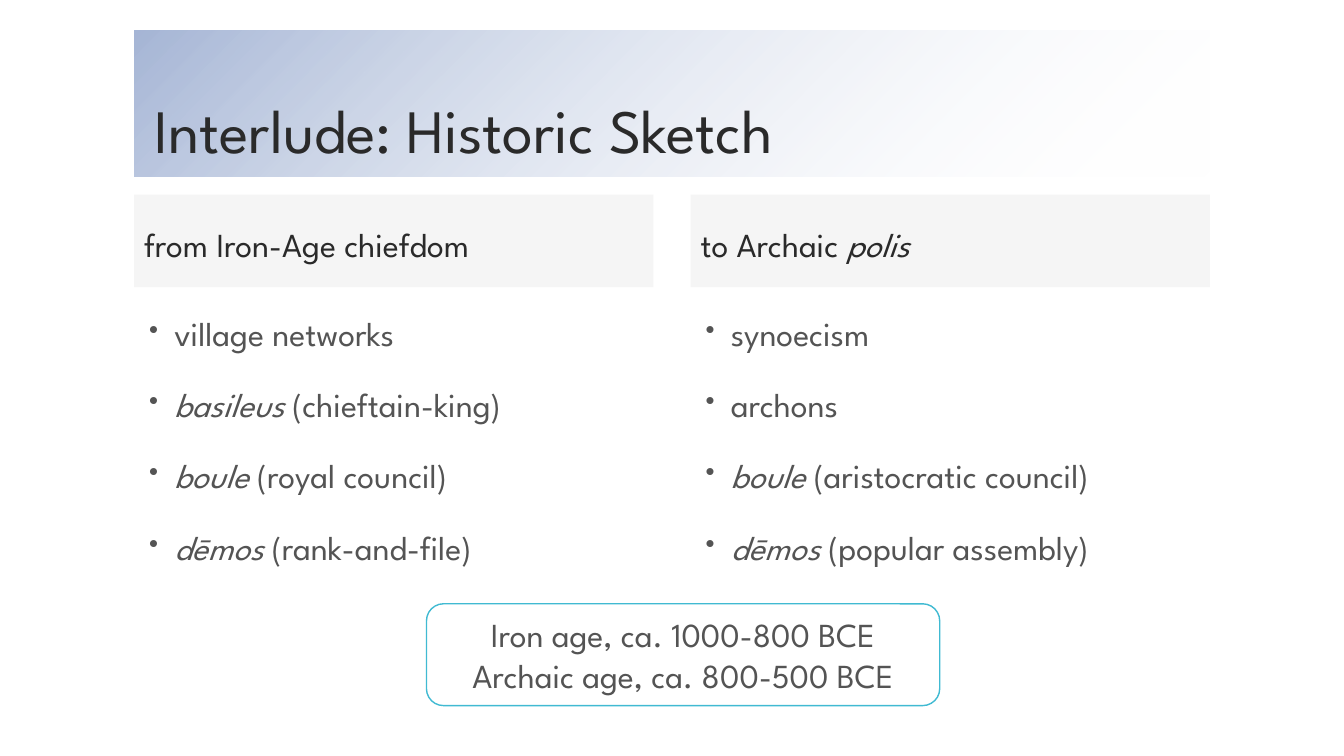
from lxml import etree
from pptx import Presentation
from pptx.dml.color import RGBColor
from pptx.enum.shapes import MSO_SHAPE
from pptx.enum.text import MSO_ANCHOR, MSO_AUTO_SIZE, PP_ALIGN
from pptx.oxml.ns import qn
from pptx.util import Inches, Pt

RECTANGLE = MSO_SHAPE.RECTANGLE
ROUNDED = MSO_SHAPE.ROUNDED_RECTANGLE
MIDDLE = MSO_ANCHOR.MIDDLE
BOTTOM = MSO_ANCHOR.BOTTOM
GROW = MSO_AUTO_SIZE.SHAPE_TO_FIT_TEXT
LEFT = PP_ALIGN.LEFT
CENTER = PP_ALIGN.CENTER

FONT = "League Spartan"
COLORS = {
    "heading": "2A2A2A",
    "body": "545454",
    "band": "A6B6D6",
    "white": "FFFFFF",
    "gray": "BFBFBF",
    "outline": "40BAD2",
}

MARGIN = 1.33
CONTENT_WIDTH = 10.67
COLUMN_WIDTH = 5.15
HEADING_HEIGHT = 0.92
LIST_OFFSET = 1.07
LIST_HEIGHT = 2.91

COLUMNS = [
    (
        [("from Iron-Age chiefdom", False)],
        [
            [("village networks", False)],
            [("basileus", True), (" (chieftain-king)", False)],
            [("boule", True), (" (royal council)", False)],
            [("dēmos", True), (" (rank-and-file)", False)],
        ],
    ),
    (
        [("to Archaic ", False), ("polis", True)],
        [
            [("synoecism", False)],
            [("archons", False)],
            [("boule", True), (" (aristocratic council)", False)],
            [("dēmos", True), (" (popular assembly)", False)],
        ],
    ),
]
DATES = ["Iron age, ca. 1000-800 BCE", "Archaic age, ca. 800-500 BCE"]


def color(name):
    return RGBColor.from_string(COLORS[name])


def set_alpha(color_element, percent):
    alpha = etree.SubElement(color_element, qn("a:alpha"))
    alpha.set("val", str(percent * 1000))


def add_box(page, kind, left, top, width, height):
    box = page.shapes.add_shape(
        kind, Inches(left), Inches(top), Inches(width), Inches(height)
    )
    box.shadow.inherit = False
    box.line.fill.background()
    return box


def write(para, spans, size, color_name, spacing=1.0, align=LEFT):
    para.font.name = FONT
    para.font.size = Pt(size)
    para.font.color.rgb = color(color_name)
    para.line_spacing = spacing
    para.alignment = align
    for text, italic in spans:
        span = para.add_run()
        span.text = text
        if italic:
            span.font.italic = True


def add_bullet(para):
    properties = para._p.get_or_add_pPr()
    properties.set("marL", str(Inches(0.3)))
    properties.set("indent", str(-Inches(0.25)))
    bullet_color = etree.SubElement(properties, qn("a:buClr"))
    etree.SubElement(bullet_color, qn("a:srgbClr")).set("val", COLORS["body"])
    etree.SubElement(properties, qn("a:buSzPct")).set("val", "80000")
    etree.SubElement(properties, qn("a:buChar")).set("char", "•")


def add_title(page, left, top, width, height):
    box = add_box(page, RECTANGLE, left, top, width, height)
    box.fill.gradient()
    box.fill.gradient_angle = 315
    for stop, name in zip(box.fill.gradient_stops, ("band", "white")):
        stop.color.rgb = color(name)
    set_alpha(box.element.spPr.findall(".//" + qn("a:srgbClr"))[-1], 0)
    frame = box.text_frame
    frame.vertical_anchor = BOTTOM
    frame.margin_left = frame.margin_right = Inches(0.2)
    frame.margin_top = frame.margin_bottom = Inches(0.1)
    write(frame.paragraphs[0], [("Interlude: Historic Sketch", False)], 44, "heading", 0.9)


def add_column(page, left, top, width, heading, items):
    box = add_box(page, RECTANGLE, left, top, width, HEADING_HEIGHT)
    box.fill.solid()
    box.fill.fore_color.rgb = color("gray")
    set_alpha(box.element.spPr.find(".//" + qn("a:srgbClr")), 15)
    box.text_frame.vertical_anchor = MIDDLE
    write(box.text_frame.paragraphs[0], heading, 24, "heading", 1.14)

    body = page.shapes.add_textbox(
        Inches(left), Inches(top + LIST_OFFSET), Inches(width), Inches(LIST_HEIGHT)
    )
    frame = body.text_frame
    frame.word_wrap = True
    for index, spans in enumerate(items):
        para = frame.add_paragraph() if index else frame.paragraphs[0]
        add_bullet(para)
        write(para, spans, 24, "body", 1.14)
        para.space_before = Pt(18 if index else 0)


def add_dates(page, left, top, width, height):
    box = add_box(page, ROUNDED, left, top, width, height)
    box.fill.solid()
    box.fill.fore_color.rgb = color("white")
    box.line.color.rgb = color("outline")
    box.line.width = Pt(1)
    frame = box.text_frame
    frame.word_wrap = False
    frame.auto_size = GROW
    frame.vertical_anchor = MIDDLE
    for index, text in enumerate(DATES):
        para = frame.add_paragraph() if index else frame.paragraphs[0]
        write(para, [(text, False)], 24, "body", align=CENTER)


def main():
    deck = Presentation()
    deck.slide_width = Inches(13.33)
    deck.slide_height = Inches(7.5)
    page = deck.slides.add_slide(deck.slide_layouts[6])
    add_title(page, MARGIN, 0.3, CONTENT_WIDTH, 1.45)
    for index, (heading, items) in enumerate(COLUMNS):
        left = MARGIN + index * (CONTENT_WIDTH - COLUMN_WIDTH)
        add_column(page, left, 1.93, COLUMN_WIDTH, heading, items)
    add_dates(page, 4.23, 5.99, 5.09, 1.01)
    deck.save("out.pptx")


if __name__ == "__main__":
    main()
